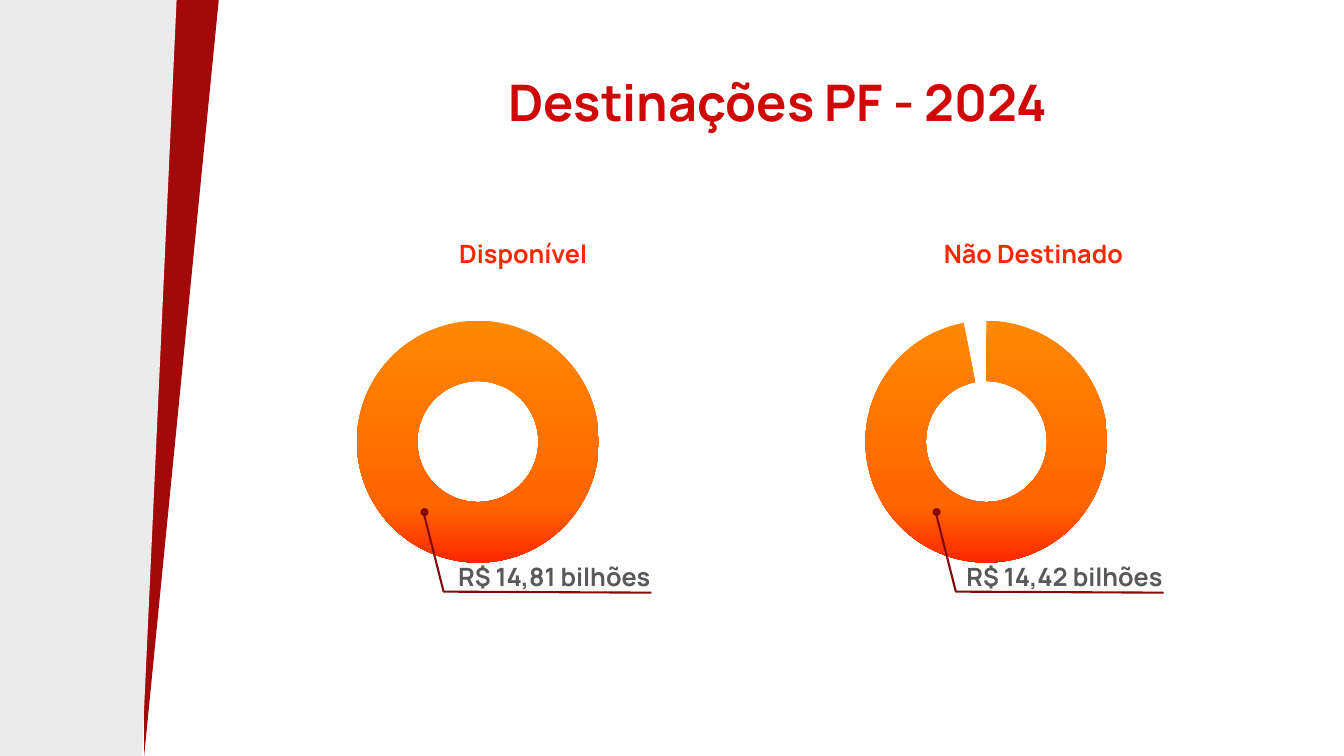
"""Build the slide with two doughnut charts of the 2024 allocations."""
from copy import deepcopy
from dataclasses import dataclass

from lxml import etree
from pptx import Presentation
from pptx import util as u
from pptx.chart.data import CategoryChartData
from pptx.dml.color import RGBColor
from pptx.enum import chart as charts, shapes, text
from pptx.oxml.ns import qn

PX = 9144
DARK_RED = RGBColor(0xA3, 0x09, 0x09)
PANEL_GREY = RGBColor(0xEB, 0xEB, 0xEB)
TITLE_RED = RGBColor(0xCF, 0x07, 0x07)
LABEL_RED = RGBColor(0xFF, 0x27, 0x00)
VALUE_GREY = RGBColor(0x59, 0x59, 0x59)
CALLOUT_RED = RGBColor(0x83, 0x0A, 0x0A)
BLACK = RGBColor(0, 0, 0)
RING_STOPS = (
    (0, RGBColor(0xFF, 0x88, 0x02)),
    (0.77, RGBColor(0xFF, 0x64, 0x00)),
    (1, LABEL_RED),
)


@dataclass(frozen=True)
class Label:
    """A line of bold text in its box."""

    wording: str
    box: tuple[int, int, int, int]
    size: int
    color: RGBColor
    align: text.PP_ALIGN = text.PP_ALIGN.CENTER


@dataclass(frozen=True)
class Allocation:
    """A doughnut with its heading and its called-out amount."""

    heading: str
    amount: str
    shares: tuple[int, ...]
    heading_left: int
    chart_left: int
    callout_left: int


ALLOCATIONS = (
    Allocation("Disponível", "R$ 14,81 bilhões", (100,), 266, 336, 421),
    Allocation("Não Destinado", "R$ 14,42 bilhões", (97, 3), 772, 840, 929),
)


def scaled(*lengths: int) -> list[u.Emu]:
    """Turn px into EMU."""
    return [u.Emu(length * PX) for length in lengths]


def add_filled(slide, kind, box: tuple[int, ...], color: RGBColor):
    """Add a plain shape without outline or shadow."""
    shape = slide.shapes.add_shape(kind, *scaled(*box))
    shape.shadow.inherit = False
    shape.fill.solid()
    shape.fill.fore_color.rgb = color
    shape.line.fill.background()
    return shape


def add_side_panel(slide) -> None:
    """Draw the slanted band and panel on the left."""
    kinds = shapes.MSO_SHAPE
    band = add_filled(slide, kinds.RIGHT_TRIANGLE, (143, 0, 74, 750), DARK_RED)
    panel = add_filled(slide, kinds.FLOWCHART_MANUAL_INPUT, (-289, 289, 750, 172), PANEL_GREY)
    panel.rotation = 270
    panel.line.color.rgb = PANEL_GREY
    panel.line.width = u.Pt(4.5)
    for shape in (band, panel):
        shape._element.spPr.find(qn("a:xfrm")).set("flipV", "1")


def add_label(slide, label: Label) -> None:
    """Write a label."""
    frame = slide.shapes.add_textbox(*scaled(*label.box)).text_frame
    frame.word_wrap = True
    frame.auto_size = text.MSO_AUTO_SIZE.SHAPE_TO_FIT_TEXT
    paragraph = frame.paragraphs[0]
    paragraph.alignment = label.align
    run = paragraph.add_run()
    run.text = label.wording
    for name, value in {"name": "Manrope", "size": u.Pt(label.size), "bold": True}.items():
        setattr(run.font, name, value)
    run.font.color.rgb = label.color


def add_doughnut(slide, left: int, shares: tuple[int, ...]) -> None:
    """Draw a ring whose first share has a gradient and whose rest is empty."""
    data = CategoryChartData()
    data.categories = [str(number + 1) for number in range(len(shares))]
    data.add_series("Series 1", shares)
    chart = slide.shapes.add_chart(
        charts.XL_CHART_TYPE.DOUGHNUT_EXPLODED, *scaled(left, 296, 276, 276), data
    ).chart
    for name, value in {"has_title": False, "has_legend": False}.items():
        setattr(chart, name, value)
    for name, value in {"name": "Roboto", "size": u.Pt(10)}.items():
        setattr(chart.font, name, value)
    chart.font.color.rgb = BLACK
    plot = chart.plots[0]
    plot.vary_by_categories = True
    plot._element.find(qn("c:holeSize")).set("val", "24")
    for explosion in plot._element.iter(qn("c:explosion")):
        explosion.set("val", "7")

    points = plot.series[0].points
    for index in range(len(shares)):
        points[index].format.line.fill.background()
        points[index].format.fill.background()
    fill = points[0].format.fill
    fill.gradient()
    fill.gradient_angle = 270
    stop_list = next(plot._element.iter(qn("a:gsLst")))
    stop_list.append(deepcopy(stop_list[0]))
    for stop, (position, color) in zip(fill.gradient_stops, RING_STOPS):
        stop.position = position
        stop.color.rgb = color


def add_callout(slide, left: int) -> None:
    """Draw the bent leader line and the dot at its start."""
    builder = slide.shapes.build_freeform(left, 512, scale=PX)
    builder.add_line_segments([(left + 19, 587), (left + 225, 588)], close=False)
    leader = builder.convert_to_shape()
    leader.shadow.inherit = False
    leader.fill.background()
    leader.line.color.rgb = CALLOUT_RED
    leader.line.width = u.Pt(1.5)
    etree.SubElement(leader.line._get_or_add_ln(), qn("a:round"))
    add_filled(slide, shapes.MSO_SHAPE.OVAL, (left - 4, 504, 8, 8), CALLOUT_RED)


def add_allocation(slide, item: Allocation) -> None:
    """Draw one doughnut with its texts."""
    add_label(slide, Label(item.heading, (item.heading_left, 232, 506, 40), 18, LABEL_RED))
    add_doughnut(slide, item.chart_left, item.shares)
    add_callout(slide, item.callout_left)
    amount_box = (item.callout_left + 6, 552, 228, 40)
    add_label(slide, Label(item.amount, amount_box, 18, VALUE_GREY, text.PP_ALIGN.RIGHT))


def main() -> None:
    """Build and save the presentation."""
    presentation = Presentation()
    presentation.slide_width, presentation.slide_height = scaled(1333, 750)
    slide = presentation.slides.add_slide(presentation.slide_layouts[6])
    add_side_panel(slide)
    add_label(slide, Label("Destinações PF - 2024", (468, 66, 607, 71), 36, TITLE_RED))
    for item in ALLOCATIONS:
        add_allocation(slide, item)
    presentation.save("out.pptx")


if __name__ == "__main__":
    main()
